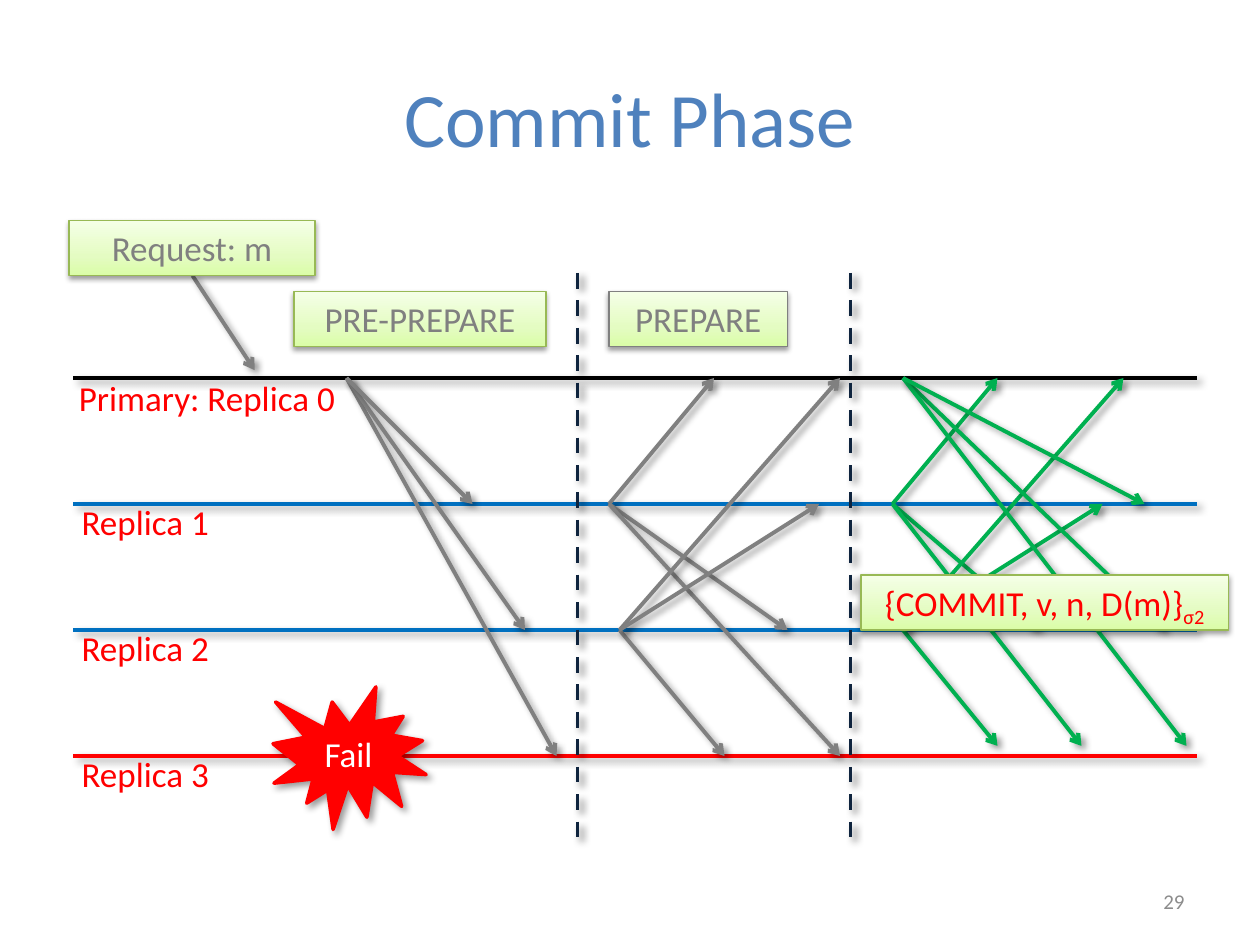
from copy import deepcopy
from dataclasses import dataclass
from lxml import etree
from pptx import Presentation
from pptx.dml.color import RGBColor
from pptx.enum.dml import MSO_LINE
from pptx.enum.shapes import MSO_CONNECTOR, MSO_SHAPE
from pptx.enum.text import MSO_ANCHOR, PP_ALIGN
from pptx.oxml.ns import qn
from pptx.util import Pt

LEFT, MID, RIGHT = PP_ALIGN.LEFT, PP_ALIGN.CENTER, PP_ALIGN.RIGHT
TOP, CENTER = MSO_ANCHOR.TOP, MSO_ANCHOR.MIDDLE
RECT, SEAL = MSO_SHAPE.RECTANGLE, MSO_SHAPE.EXPLOSION1
STRAIGHT, DASH = MSO_CONNECTOR.STRAIGHT, MSO_LINE.DASH


@dataclass(frozen=True)
class Shadow:
    alpha: int
    blur: float
    dist: float
    angle: int


@dataclass(frozen=True)
class Theme:
    font: str = "Calibri"
    title: int = 44
    body: int = 20
    small: int = 12
    stroke: float = 2.25
    blue: str = "4F81BD"
    gray: str = "808080"
    pale: str = "8C8C8C"
    green: str = "00B050"
    red: str = "FF0000"
    white: str = "FFFFFF"
    black: str = "000000"
    lane: str = "0070C0"
    navy: str = "0F243E"
    edge: str = "98B955"
    stops: tuple = ((0, "DAFDA7"), (0.35, "E4FCC2"), (1, "F5FFE7"))
    deep: Shadow = Shadow(40, 4, 3, 45)
    soft: Shadow = Shadow(38, 3.1, 1.6, 90)


@dataclass(frozen=True)
class Label:
    text: str
    x: float
    y: float
    w: float
    h: float
    color: str
    size: int
    align: PP_ALIGN = LEFT
    anchor: MSO_ANCHOR = TOP


@dataclass(frozen=True)
class Box:
    text: str
    x: float
    y: float
    w: float
    color: str
    edge: str
    sub: str = ""


@dataclass(frozen=True)
class Fan:
    x: float
    lane: int
    color: str
    ends: tuple


T = Theme()
LANES = (T.black, T.lane, T.lane, T.red)
NAMES = ("Primary: Replica 0", "Replica 1", "Replica 2", "Replica 3")
FANS = (
    Fan(198, 0, T.gray, ((318, 3), (300, 2), (270, 1))),
    Fan(348, 1, T.gray, ((408, 0), (450, 2), (480, 3))),
    Fan(354, 2, T.gray, ((414, 3), (480, 0), (468, 1))),
    Fan(510, 1, T.green, ((570, 0), (594, 2), (618, 2.92))),
    Fan(516, 2, T.green, ((570, 2.92), (642, 0), (630, 1))),
    Fan(516, 0, T.green, ((666, 2), (678, 2.92), (654, 1))),
)
BOXES = (
    Box("Request: m", 39.5, 126, 140.5, T.gray, T.edge),
    Box("PRE-PREPARE", 168, 166.5, 144, T.gray, T.edge),
    Box("PREPARE", 348, 166.5, 102, T.gray, T.gray),
    Box("{COMMIT, v, n, D(m)}", 492, 328.5, 210, T.red, T.edge, "σ2"),
)
LABELS = (
    Label("Commit Phase", 36, 21.6, 648, 90, T.blue, T.title, MID, CENTER),
    Label("29", 516, 500.4, 168, 28.8, T.pale, T.small, RIGHT, CENTER),
)


def rgb(color: str) -> RGBColor:
    return RGBColor.from_string(color)


def level(lane: float) -> float:
    return 216 + 72 * lane


def shade(shape, look: Shadow) -> None:
    group = etree.SubElement(shape.element.spPr, qn("a:effectLst"))
    outer = etree.SubElement(
        group, qn("a:outerShdw"), blurRad=str(Pt(look.blur)),
        dist=str(Pt(look.dist)), dir=str(look.angle * 60000), rotWithShape="0")
    tint = etree.SubElement(outer, qn("a:srgbClr"), val=T.black)
    etree.SubElement(tint, qn("a:alpha"), val=str(look.alpha * 1000))


def write(shape, text: str, color: str, size: int, align: PP_ALIGN,
          anchor: MSO_ANCHOR, sub: str = "") -> None:
    frame = shape.text_frame
    frame.word_wrap = True
    frame.vertical_anchor = anchor
    para = frame.paragraphs[0]
    para.alignment = align
    para.font.name, para.font.size = T.font, Pt(size)
    para.font.color.rgb = rgb(color)
    para.add_run().text = text
    if sub:
        run = para.add_run()
        run.text = sub
        run.font._element.set("baseline", "-25000")


def draw_line(slide, x1: float, y1: float, x2: float, y2: float, color: str,
              dash: bool = False, arrow: bool = False) -> None:
    line = slide.shapes.add_connector(STRAIGHT, Pt(x1), Pt(y1), Pt(x2), Pt(y2))
    line.line.color.rgb = rgb(color)
    line.line.width = Pt(T.stroke)
    if dash:
        line.line.dash_style = DASH
    if arrow:
        etree.SubElement(line.line._get_or_add_ln(), qn("a:tailEnd"), type="arrow")
    shade(line, T.deep)


def draw_fan(slide, fan: Fan) -> None:
    for x, lane in fan.ends:
        draw_line(slide, fan.x, level(fan.lane), x, level(lane), fan.color, arrow=True)


def draw_label(slide, item: Label) -> None:
    shape = slide.shapes.add_textbox(Pt(item.x), Pt(item.y), Pt(item.w), Pt(item.h))
    write(shape, item.text, item.color, item.size, item.align, item.anchor)


def draw_box(slide, box: Box) -> None:
    shape = slide.shapes.add_shape(RECT, Pt(box.x), Pt(box.y), Pt(box.w), Pt(31.5))
    shape.fill.gradient()
    shape.fill.gradient_angle = 90
    stops = shape.element.spPr.find(".//" + qn("a:gsLst"))
    stops.append(deepcopy(stops[0]))
    for stop, (place, color) in zip(shape.fill.gradient_stops, T.stops):
        stop.position = place
        stop.color.rgb = rgb(color)
    shape.line.color.rgb = rgb(box.edge)
    shape.line.width = Pt(0.75)
    shade(shape, T.soft)
    write(shape, box.text, box.color, T.body, MID, TOP, box.sub)


def draw_seal(slide) -> None:
    seal = slide.shapes.add_shape(SEAL, Pt(156), Pt(392.5), Pt(87.5), Pt(81.5))
    seal.fill.solid()
    seal.fill.fore_color.rgb = seal.line.color.rgb = rgb(T.red)
    seal.line.width = Pt(2)
    shade(seal, T.deep)
    write(seal, "Fail", T.white, T.body, MID, CENTER)


def main() -> None:
    deck = Presentation()
    deck.slide_width, deck.slide_height = Pt(720), Pt(540)
    slide = deck.slides.add_slide(deck.slide_layouts[6])
    draw_line(slide, 110, 157.5, 145.5, 211.5, T.gray, arrow=True)
    for lane, (name, color) in enumerate(zip(NAMES, LANES)):
        y = level(lane)
        draw_line(slide, 42, y, 684, y, color)
        x, top, wide = (39.5, y - 5.3, 140.5) if lane else (38, y - 4.5, 214)
        draw_label(slide, Label(name, x, top, wide, 33, T.red, T.body))
    for x in (330, 486):
        draw_line(slide, x, 156, x, 480, T.navy, dash=True)
    for fan in FANS:
        draw_fan(slide, fan)
    draw_seal(slide)
    for box in BOXES:
        draw_box(slide, box)
    for item in LABELS:
        draw_label(slide, item)
    deck.save("out.pptx")


if __name__ == "__main__":
    main()
